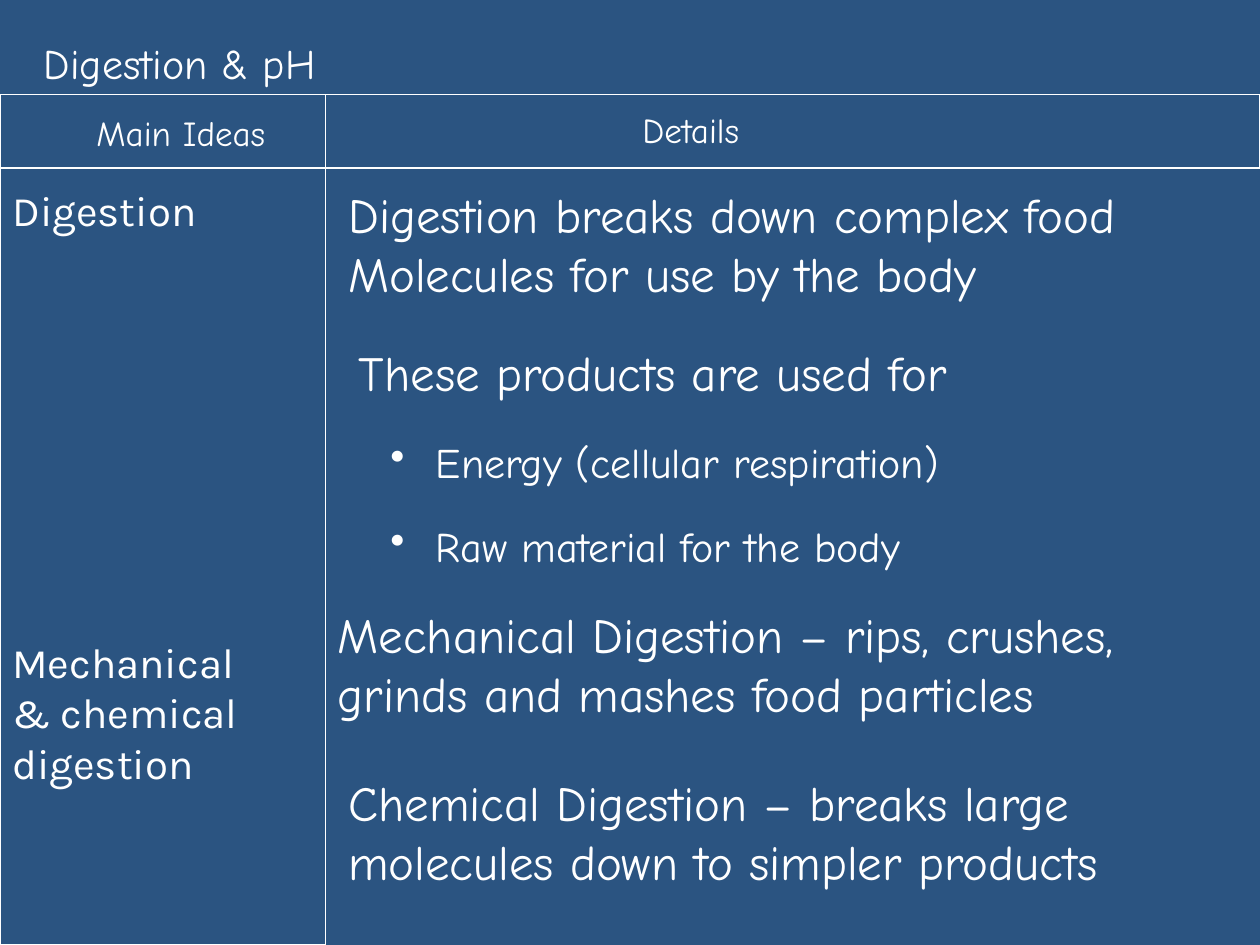
from lxml import etree
from pptx import Presentation
from pptx.dml.color import RGBColor
from pptx.enum.shapes import MSO_CONNECTOR, MSO_SHAPE
from pptx.oxml.ns import qn
from pptx.util import Pt

PX = 9525
NAVY = RGBColor(0x2B, 0x54, 0x81)
WHITE = RGBColor(0xFF, 0xFF, 0xFF)
HAND = "Comic Neue"
SANS = "Karla"
COLUMN_X, HEADER_Y, BODY_Y = 248, 72, 128

prs = Presentation()
prs.slide_width, prs.slide_height = 960 * PX, 720 * PX
s = prs.slides.add_slide(prs.slide_layouts[6])
s.background.fill.solid()
s.background.fill.fore_color.rgb = NAVY


def add_text(text, x, y, w, h, size, font=HAND, wrap=True, bullet=False):
    tf = s.shapes.add_textbox(x * PX, y * PX, w * PX, h * PX).text_frame
    tf.word_wrap = wrap
    tf.text = text
    for p in tf.paragraphs:
        if bullet:
            p.level = 1
            pPr = p._p.get_or_add_pPr()
            pPr.set("marL", str(48 * PX))
            pPr.set("indent", str(-24 * PX))
            etree.SubElement(pPr, qn("a:buChar")).set("char", "•")
        for r in p.runs:
            r.font.name = font
            r.font.size = Pt(size)
            r.font.color.rgb = WHITE


for x, y, w, h in [
    (0, HEADER_Y, 960, BODY_Y - HEADER_Y),
    (0, BODY_Y, COLUMN_X, 720 - BODY_Y),
]:
    sp = s.shapes.add_shape(MSO_SHAPE.RECTANGLE, x * PX, y * PX, w * PX, h * PX)
    sp.shadow.inherit = False
    sp.fill.background()
    sp.line.color.rgb = WHITE
    sp.line.width = Pt(0.75)

divider = s.shapes.add_connector(
    MSO_CONNECTOR.STRAIGHT, COLUMN_X * PX, BODY_Y * PX, COLUMN_X * PX, HEADER_Y * PX
)
divider.line.color.rgb = WHITE
divider.line.width = Pt(0.75)
etree.SubElement(divider._element.spPr, qn("a:effectLst"))

add_text("Digestion & pH", 24, 24, 936, 48, 24)
add_text("Main Ideas", 64, 80, 157, 47, 20, wrap=False)
add_text("Details", 480, 78, 108, 47, 20, wrap=False)

add_text("Digestion", 0, 136, 209, 48, 24, font=SANS)
add_text("Mechanical & chemical digestion", 0, 480, 209, 125, 24, font=SANS)

add_text(
    "Digestion breaks down complex food\nMolecules for use by the body",
    256, 136, 680, 99, 28,
)
add_text("These products are used for", 264, 256, 552, 55, 28)
add_text(" Energy (cellular respiration)", 264, 328, 552, 48, 24, bullet=True)
add_text(" Raw material for the body", 264, 392, 680, 48, 24, bullet=True)
add_text(
    "Mechanical Digestion – rips, crushes, grinds and mashes food particles",
    248, 456, 680, 99, 28,
)
add_text(
    "Chemical Digestion – breaks large molecules down to simpler products",
    256, 584, 680, 99, 28,
)

prs.save("out.pptx")
